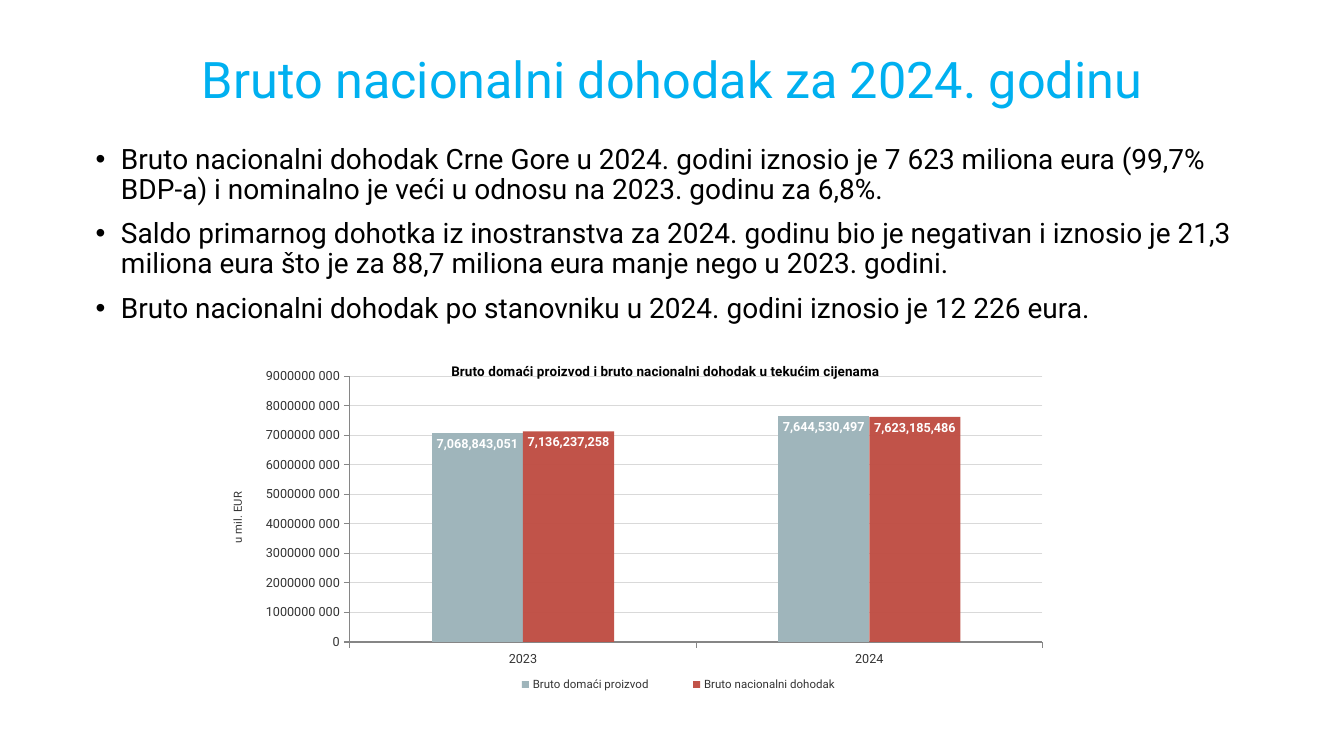
from lxml import etree
from pptx import Presentation
from pptx.chart.data import CategoryChartData
from pptx.dml.color import RGBColor
from pptx.enum import chart as ch, text as tx
from pptx.oxml.ns import qn
from pptx.util import Cm, Pt

FONT = "Roboto"
COLORS = {
    "title": "00B0F0",
    "text": "000000",
    "axis_text": "333333",
    "axis_line": "868686",
    "grid": "D9D9D9",
    "label": "FFFFFF",
    "product": "9FB5BB",
    "income": "C05046",
}
TITLE = "Bruto nacionalni dohodak za 2024. godinu"
POINTS = [
    "Bruto nacionalni dohodak Crne Gore u 2024. godini iznosio je 7 623 miliona eura "
    "(99,7% BDP-a) i nominalno je veći u odnosu na 2023. godinu za 6,8%.",
    "Saldo primarnog dohotka iz inostranstva za 2024. godinu bio je negativan i iznosio je "
    "21,3 miliona eura što je za 88,7 miliona eura manje nego u 2023. godini.",
    "Bruto nacionalni dohodak po stanovniku u 2024. godini iznosio je 12 226 eura.",
]
CHART_TITLE = "Bruto domaći proizvod i bruto nacionalni dohodak u tekućim cijenama"
YEARS = ["2023", "2024"]
SERIES = [
    ("Bruto domaći proizvod", (7068843051, 7644530497), "product"),
    ("Bruto nacionalni dohodak", (7136237258, 7623185486), "income"),
]


def rgb(name):
    return RGBColor.from_string(COLORS[name])


def style_font(font, size, color, bold=False):
    font.name = FONT
    font.size = Pt(size)
    font.bold = bold
    font.color.rgb = rgb(color)


def add_title(slide):
    frame = slide.shapes.add_textbox(Cm(2.34), Cm(1.02), Cm(29.21), Cm(1.73)).text_frame
    frame.word_wrap = True
    frame.vertical_anchor = tx.MSO_ANCHOR.BOTTOM
    frame.margin_left = frame.margin_right = frame.margin_top = frame.margin_bottom = 0
    frame.text = TITLE
    heading = frame.paragraphs[0]
    heading.alignment = tx.PP_ALIGN.CENTER
    heading.line_spacing = 0.9
    style_font(heading.runs[0].font, 36, "title")


def add_bullet(paragraph):
    props = paragraph._p.get_or_add_pPr()
    props.set("marL", str(Cm(0.64)))
    props.set("indent", str(-Cm(0.64)))
    etree.SubElement(props, qn("a:buFont"), typeface="Arial")
    etree.SubElement(props, qn("a:buChar"), char="•")


def add_points(slide):
    frame = slide.shapes.add_textbox(Cm(2.16), Cm(3.53), Cm(29.21), Cm(4.93)).text_frame
    frame.word_wrap = True
    frame.text = "\n".join(POINTS)
    for index, point in enumerate(frame.paragraphs):
        add_bullet(point)
        point.line_spacing = 0.9
        point.space_before = Pt(10 if index else 0)
        style_font(point.runs[0].font, 20, "text")


def set_layout(parent, position, box, inner=False):
    for old in parent.findall(qn("c:layout")):
        parent.remove(old)
    layout = etree.Element(qn("c:layout"))
    manual = etree.SubElement(layout, qn("c:manualLayout"))
    settings = [("layoutTarget", "inner")] if inner else []
    settings += [("xMode", "edge"), ("yMode", "edge"), *zip("xywh", box)]
    for tag, value in settings:
        etree.SubElement(manual, qn(f"c:{tag}"), val=str(value))
    parent.insert(position, layout)


def style_axis(axis):
    axis.major_tick_mark = ch.XL_TICK_MARK.OUTSIDE
    axis.minor_tick_mark = ch.XL_TICK_MARK.NONE
    axis.format.line.color.rgb = rgb("axis_line")
    axis.format.line.width = Pt(0.75)
    style_font(axis.tick_labels.font, 9, "axis_text")


def style_value_axis(axis):
    style_axis(axis)
    axis.minimum_scale = 0
    axis.maximum_scale = 9000000000
    axis.major_unit = 1000000000
    axis.tick_labels.number_format = "#\\ ##0"
    axis.tick_labels.number_format_is_linked = False
    axis.major_gridlines.format.line.color.rgb = rgb("grid")
    axis.major_gridlines.format.line.width = Pt(0.75)
    axis.axis_title.text_frame.text = "u mil. EUR"
    style_font(axis.axis_title.text_frame.paragraphs[0].runs[0].font, 8, "axis_text")


def style_columns(plot):
    plot.gap_width = 180
    plot.overlap = 0
    plot.vary_by_categories = False
    for columns, (_, _, color) in zip(plot.series, SERIES):
        columns.format.fill.solid()
        columns.format.fill.fore_color.rgb = rgb(color)
        labels = columns.data_labels
        labels.show_value = True
        labels.number_format = "#,##0"
        labels.number_format_is_linked = False
        labels.position = ch.XL_LABEL_POSITION.INSIDE_END
        style_font(labels.font, 9, "label", bold=True)


def add_income_chart(slide):
    data = CategoryChartData(number_format="#,##0")
    data.categories = YEARS
    for name, values, _ in SERIES:
        data.add_series(name, values)
    chart = slide.shapes.add_chart(
        ch.XL_CHART_TYPE.COLUMN_CLUSTERED, Cm(5.72), Cm(8.74), Cm(22.1), Cm(9.3), data
    ).chart
    style_font(chart.font, 8, "text")
    chart.has_title = True
    chart.chart_title.text_frame.text = CHART_TITLE
    style_font(chart.chart_title.text_frame.paragraphs[0].runs[0].font, 9.6, "text", bold=True)
    style_axis(chart.category_axis)
    style_value_axis(chart.value_axis)
    style_columns(chart.plots[0])
    chart.has_legend = True
    chart.legend.position = ch.XL_LEGEND_POSITION.BOTTOM
    chart.legend.include_in_layout = False
    style_font(chart.legend.font, 8.2, "axis_text")

    root = chart.element
    income_fill = root.findall(f".//{qn('c:ser')}")[1].find(f"{qn('c:spPr')}//{qn('a:srgbClr')}")
    etree.SubElement(income_fill, qn("a:alpha"), val="98000")
    set_layout(root.find(f".//{qn('c:plotArea')}"), 0, (0.14, 0.08, 0.79, 0.72), inner=True)
    set_layout(root.find(f".//{qn('c:legend')}"), 1, (0.29, 0.88, 0.45, 0.07))


def main():
    deck = Presentation()
    deck.slide_width = Cm(33.87)
    deck.slide_height = Cm(19.05)
    slide = deck.slides.add_slide(deck.slide_layouts[6])
    add_points(slide)
    add_title(slide)
    add_income_chart(slide)
    deck.save("out.pptx")


if __name__ == "__main__":
    main()
